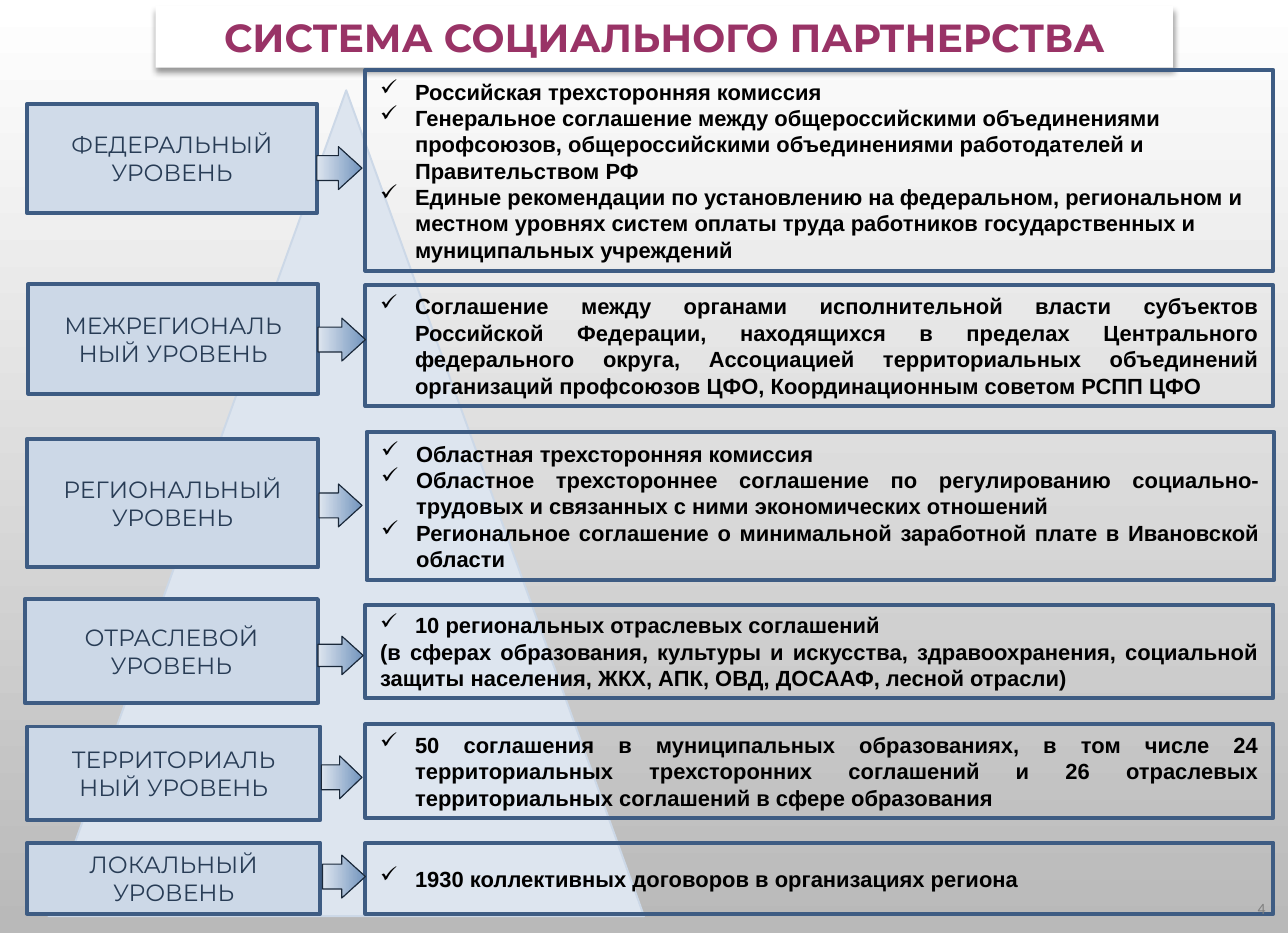
"""Build the slide on the levels of the social partnership system."""
from dataclasses import dataclass
from typing import Any, Optional

import lxml.etree
import pptx
import pptx.dml.color
import pptx.dml.fill
import pptx.enum.shapes
import pptx.enum.text
import pptx.oxml.ns
import pptx.util

Inches = pptx.util.Inches
Pt = pptx.util.Pt
Shapes = pptx.enum.shapes.MSO_SHAPE
Align = pptx.enum.text.PP_ALIGN

BORDER = "3E5C83"
LEVEL_FILL = "CCD8E7"
INDENT = Inches(0.31)
FRAME_FORMAT = {
    "word_wrap": True,
    "auto_size": pptx.enum.text.MSO_AUTO_SIZE.NONE,
    "vertical_anchor": pptx.enum.text.MSO_ANCHOR.MIDDLE,
    "margin_left": Inches(0.13),
    "margin_right": Inches(0.13),
    "margin_top": Inches(0.06),
    "margin_bottom": Inches(0.06),
}


@dataclass(frozen=True)
class Area:
    left: float
    top: float
    width: float
    height: float

    def lengths(self) -> list[int]:
        return [Inches(v) for v in (self.left, self.top, self.width, self.height)]


@dataclass(frozen=True)
class TextStyle:
    font: str
    size: float
    color: str
    bold: bool = False
    align: Any = Align.CENTER


@dataclass(frozen=True)
class Level:
    name: tuple[str, ...]
    name_area: Area
    arrow_area: Area
    details_area: Area
    details: tuple[str, ...]
    closing: tuple[str, ...] = ()
    fill: str = LEVEL_FILL
    align: Any = Align.JUSTIFY


TITLE_STYLE = TextStyle("Montserrat", 25, "993366", True)
NAME_STYLE = TextStyle("Montserrat", 15, "283C55")
NUMBER_STYLE = TextStyle("Calibri", 10, "808080", align=Align.RIGHT)

LEVELS = (
    Level(
        ("ФЕДЕРАЛЬНЫЙ УРОВЕНЬ",),
        Area(0.24, 0.92, 2.57, 0.97),
        Area(2.81, 1.3, 0.4, 0.38),
        Area(3.24, 0.62, 8.05, 1.78),
        (
            "Российская трехсторонняя комиссия",
            "Генеральное соглашение между общероссийскими объединениями профсоюзов, "
            "общероссийскими объединениями работодателей и Правительством РФ",
            "Единые рекомендации по установлению на федеральном, региональном и местном "
            "уровнях систем оплаты труда работников государственных и муниципальных учреждений",
        ),
        fill="D0DBE9",
        align=Align.LEFT,
    ),
    Level(
        ("МЕЖРЕГИОНАЛЬ", "НЫЙ УРОВЕНЬ"),
        Area(0.25, 2.52, 2.57, 0.97),
        Area(2.82, 2.82, 0.42, 0.38),
        Area(3.24, 2.53, 8.05, 1.07),
        (
            "Соглашение между органами исполнительной власти субъектов Российской Федерации, "
            "находящихся в пределах Центрального федерального округа, Ассоциацией "
            "территориальных объединений организаций профсоюзов ЦФО, Координационным "
            "советом РСПП ЦФО",
        ),
    ),
    Level(
        ("РЕГИОНАЛЬНЫЙ УРОВЕНЬ",),
        Area(0.24, 3.89, 2.58, 1.14),
        Area(2.83, 4.29, 0.38, 0.38),
        Area(3.25, 3.83, 8.05, 1.31),
        (
            "Областная трехсторонняя комиссия",
            "Областное трехстороннее соглашение по регулированию социально-трудовых "
            "и связанных с ними экономических отношений",
            "Региональное соглашение о минимальной заработной плате в Ивановской области",
        ),
    ),
    Level(
        ("ОТРАСЛЕВОЙ УРОВЕНЬ",),
        Area(0.22, 5.31, 2.6, 0.92),
        Area(2.82, 5.64, 0.4, 0.34),
        Area(3.24, 5.36, 8.05, 0.83),
        ("10 региональных отраслевых соглашений",),
        (
            "(в сферах образования, культуры и искусства, здравоохранения, социальной "
            "защиты населения, ЖКХ, АПК, ОВД, ДОСААФ, лесной отрасли)",
        ),
    ),
    Level(
        ("ТЕРРИТОРИАЛЬ", "НЫЙ УРОВЕНЬ"),
        Area(0.24, 6.44, 2.6, 0.83),
        Area(2.85, 6.7, 0.36, 0.38),
        Area(3.24, 6.42, 8.05, 0.83),
        (
            "50 соглашения в муниципальных образованиях, в том числе 24 территориальных "
            "трехсторонних соглашений и 26 отраслевых территориальных соглашений "
            "в сфере образования",
        ),
    ),
    Level(
        ("ЛОКАЛЬНЫЙ УРОВЕНЬ",),
        Area(0.24, 7.47, 2.6, 0.63),
        Area(2.86, 7.58, 0.38, 0.38),
        Area(3.24, 7.47, 8.05, 0.63),
        ("1930 коллективных договоров в организациях региона",),
    ),
)


def rgb(color: str) -> pptx.dml.color.RGBColor:
    return pptx.dml.color.RGBColor.from_string(color)


def apply_format(target: Any, values: dict[str, Any]) -> None:
    for name, value in values.items():
        setattr(target, name, value)


def paint_gradient(fill: pptx.dml.fill.FillFormat, colors: tuple[str, str], angle: float) -> None:
    fill.gradient()
    fill.gradient_angle = angle
    for position, (stop, color) in enumerate(zip(fill.gradient_stops, colors)):
        apply_format(stop, {"position": position})
        stop.color.rgb = rgb(color)


def add_figure(slide: Any, kind: Any, area: Area, fill: Optional[str] = None,
               line: Optional[str] = None, line_width: float = 2.5) -> Any:
    figure = slide.shapes.add_shape(kind, *area.lengths())
    figure.shadow.inherit = False
    if fill:
        figure.fill.solid()
        figure.fill.fore_color.rgb = rgb(fill)
    else:
        figure.fill.background()
    if line:
        figure.line.color.rgb = rgb(line)
        figure.line.width = Pt(line_width)
    else:
        figure.line.fill.background()
    return figure


def add_drop_shadow(figure: Any) -> None:
    qn = pptx.oxml.ns.qn
    effects = figure.element.spPr.find(qn("a:effectLst"))
    shadow = lxml.etree.SubElement(effects, qn("a:outerShdw"), blurRad=str(Pt(4)),
                                   dist=str(Pt(3)), dir="5400000", rotWithShape="0")
    color = lxml.etree.SubElement(shadow, qn("a:srgbClr"), val="000000")
    lxml.etree.SubElement(color, qn("a:alpha"), val="40000")


def write(holder: Any, lines: tuple[str, ...], style: TextStyle, bulleted: int = 0) -> None:
    frame = holder.text_frame
    apply_format(frame, FRAME_FORMAT)
    for index, line in enumerate(lines):
        paragraph = frame.add_paragraph() if index else frame.paragraphs[0]
        paragraph.alignment = style.align
        if index < bulleted:
            properties = paragraph._p.get_or_add_pPr()
            properties.set("marL", str(INDENT))
            properties.set("indent", str(-INDENT))
            lxml.etree.SubElement(properties, pptx.oxml.ns.qn("a:buChar"), char="✓")
        run = paragraph.add_run()
        run.text = line
        apply_format(run.font, {"name": style.font, "size": Pt(style.size), "bold": style.bold})
        run.font.color.rgb = rgb(style.color)


def draw_level(slide: Any, level: Level) -> None:
    name = add_figure(slide, Shapes.RECTANGLE, level.name_area, level.fill, BORDER)
    write(name, level.name, NAME_STYLE)
    details = add_figure(slide, Shapes.RECTANGLE, level.details_area, line=BORDER)
    details_style = TextStyle("Arial", 14, "000000", True, level.align)
    write(details, level.details + level.closing, details_style, len(level.details))
    arrow = add_figure(slide, Shapes.RIGHT_ARROW, level.arrow_area, line="1A2839", line_width=0.75)
    arrow.adjustments[0], arrow.adjustments[1] = 0.58, 0.55
    paint_gradient(arrow.fill, ("DDE5EF", "7294BD"), 0)


def main() -> None:
    deck = pptx.Presentation()
    apply_format(deck, {"slide_width": Inches(11.42), "slide_height": Inches(8.27)})
    slide = deck.slides.add_slide(deck.slide_layouts[6])
    paint_gradient(slide.background.fill, ("FFFFFF", "B9B9B9"), 270)
    add_figure(slide, Shapes.ISOSCELES_TRIANGLE, Area(0.43, 0.8, 5.28, 7.32),
               "DDE5EF", LEVEL_FILL, 1.25)
    title = add_figure(slide, Shapes.RECTANGLE, Area(1.38, 0.05, 9.02, 0.55), "FFFFFF")
    add_drop_shadow(title)
    write(title, ("СИСТЕМА СОЦИАЛЬНОГО ПАРТНЕРСТВА",), TITLE_STYLE)
    for level in LEVELS:
        draw_level(slide, level)
    page_number = slide.shapes.add_textbox(*Area(10.63, 7.83, 0.72, 0.44).lengths())
    write(page_number, ("4",), NUMBER_STYLE)
    deck.save("out.pptx")


if __name__ == "__main__":
    main()
